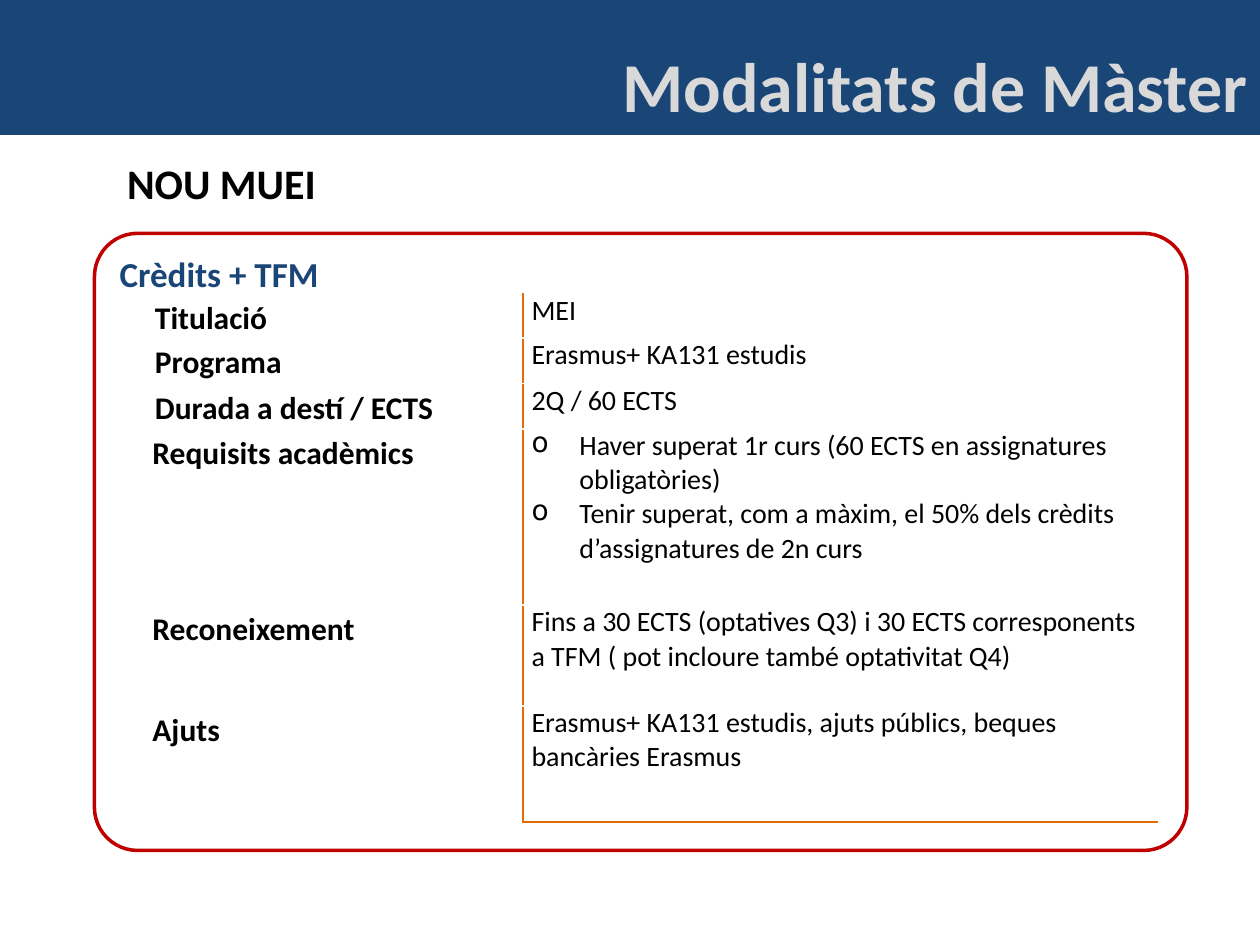
from dataclasses import dataclass

from lxml import etree
from pptx import Presentation
from pptx import util as u
from pptx.dml.color import RGBColor
from pptx.enum import shapes, text
from pptx.oxml.ns import qn


@dataclass(frozen=True)
class Theme:
    """Colours, font and type sizes of the slide."""
    navy: str = "1A4677"
    red: str = "C00000"
    orange: str = "E36C0A"
    grey: str = "D9D9D9"
    black: str = "000000"
    white: str = "FFFFFF"
    font: str = "Calibri"
    title: int = 40
    heading: int = 24
    section: int = 20
    label: int = 18
    body: int = 16


THEME = Theme()
INDENT = 0.38
MODALITY = [
    (0.35, "Titulació", 0.02, ["MEI"], False),
    (0.36, "Programa", 0.02, ["Erasmus+ KA131 estudis"], False),
    (0.36, "Durada a destí / ECTS", 0.02, ["2Q / 60 ECTS"], False),
    (1.4, "Requisits acadèmics", 0, [
        "Haver superat 1r curs (60 ECTS en assignatures obligatòries)",
        "Tenir superat, com a màxim, el 50% dels crèdits d’assignatures de 2n curs"], True),
    (0.8, "Reconeixement", 0, [
        "Fins a 30 ECTS (optatives Q3) i 30 ECTS corresponents a TFM "
        "( pot incloure també optativitat Q4)"], False),
    (0.92, "Ajuts", 0, ["Erasmus+ KA131 estudis, ajuts públics, beques bancàries Erasmus"], False),
]


def inches(box):
    """Turn a box in inches into lengths."""
    return [u.Inches(side) for side in box]


def indent(paragraph, left, hanging=0, bullet=None):
    """Set the margin, hanging indent and bullet of a paragraph."""
    props = paragraph._p.get_or_add_pPr()
    props.set("marL", str(u.Inches(left)))
    props.set("indent", str(-u.Inches(hanging)))
    if bullet:
        etree.SubElement(props, qn("a:buChar")).set("char", bullet)


def style(paragraph, size, color, bold=True):
    """Set the font of a paragraph."""
    font = paragraph.font
    font.name, font.size, font.bold = THEME.font, u.Pt(size), bold
    font.color.rgb = RGBColor.from_string(color)


def panel(slide, box, kind, fill, line):
    """Draw a filled and outlined panel."""
    shape = slide.shapes.add_shape(kind, *inches(box))
    shape.shadow.inherit = False
    shape.fill.solid()
    shape.fill.fore_color.rgb = RGBColor.from_string(fill)
    shape.line.color.rgb = RGBColor.from_string(line)
    shape.line.width = u.Pt(2)
    return shape


def caption(slide, box, words, size, color, align, wrap):
    """Write one line of bold text in a box."""
    frame = slide.shapes.add_textbox(*inches(box)).text_frame
    frame.word_wrap = wrap
    line = frame.paragraphs[0]
    line.text, line.alignment = words, align
    style(line, size, color)


def header(slide, box):
    """Draw the title band."""
    left, top, width, height = box
    panel(slide, box, shapes.MSO_SHAPE.RECTANGLE, THEME.navy, THEME.navy)
    inset = height * 0.27
    caption(slide, (left + width * 0.295, top + inset, width * 0.705, height - inset),
            "Modalitats de Màster", THEME.title, THEME.grey, text.PP_ALIGN.RIGHT, True)


def edge(cell, *sides):
    """Draw orange borders on the named sides of a cell."""
    props = cell._tc.get_or_add_tcPr()
    for side in sides:
        line = etree.SubElement(props, qn(f"a:ln{side}"), w=str(u.Pt(1)))
        fill = etree.SubElement(line, qn("a:solidFill"))
        etree.SubElement(fill, qn("a:srgbClr"), val=THEME.orange)


def fill_cell(cell, lines):
    """Write lines in a cell and return their paragraphs."""
    cell.fill.background()
    cell.margin_left = cell.margin_right = u.Inches(0.07)
    cell.margin_top = cell.margin_bottom = 0
    cell.text_frame.text = "\n".join(lines)
    return cell.text_frame.paragraphs


def details(slide, box):
    """Draw the table of labels and values."""
    frame = slide.shapes.add_table(len(MODALITY), 2, *inches(box))
    table = frame.table
    table.first_row = table.horz_banding = False
    for column, share in zip(table.columns, (0.374, 0.626)):
        column.width = u.Inches(box[2] * share)
    for index, (height, label, margin, values, listed) in enumerate(MODALITY):
        table.rows[index].height = u.Inches(height)
        name, value = table.cell(index, 0), table.cell(index, 1)
        last = index == len(MODALITY) - 1
        edge(name, "R")
        edge(value, "L", *("B" if last else ""))
        heading = fill_cell(name, [label])[0]
        indent(heading, margin)
        heading.line_spacing = 1.15
        style(heading, THEME.label, THEME.black)
        for line in fill_cell(value, values):
            if listed:
                indent(line, INDENT, INDENT, "o")
            style(line, THEME.body, THEME.black, False)


def credits_card(slide, box):
    """Draw the rounded card with its section name and table."""
    left, top, width, height = box
    card = panel(slide, box, shapes.MSO_SHAPE.ROUNDED_RECTANGLE, THEME.white, THEME.red)
    card.adjustments[0] = 0.07
    frame = card.text_frame
    frame.word_wrap, frame.vertical_anchor = True, text.MSO_ANCHOR.TOP
    section = frame.paragraphs[0]
    section.text, section.alignment = "Crèdits + TFM", text.PP_ALIGN.LEFT
    indent(section, INDENT, INDENT)
    style(section, THEME.section, THEME.navy)
    details(slide, (left + width * 0.045, top + height * 0.098, width * 0.928, height * 0.855))


def main():
    """Build and save the slide."""
    deck = Presentation()
    wide, high = 10, 7.5
    deck.slide_width, deck.slide_height = u.Inches(wide), u.Inches(high)
    slide = deck.slides.add_slide(deck.slide_layouts[6])
    credits_card(slide, (wide * 0.075, high * 0.247, wide * 0.867, high * 0.653))
    header(slide, (0, 0, wide, high * 0.141))
    caption(slide, (wide * 0.091, high * 0.16, wide * 0.179, high * 0.067),
            "NOU MUEI", THEME.heading, THEME.black, text.PP_ALIGN.LEFT, False)
    deck.save("out.pptx")


if __name__ == "__main__":
    main()
